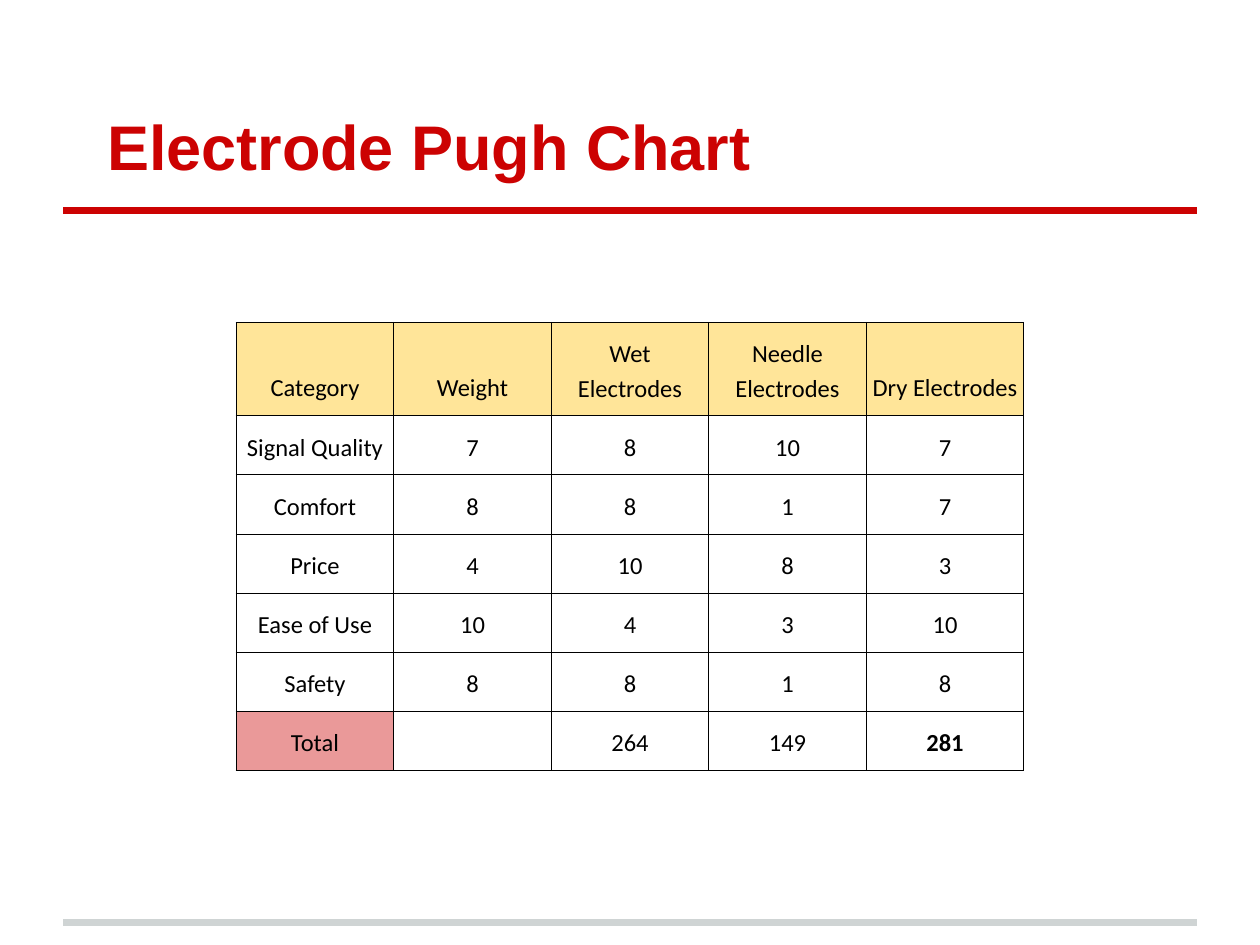
from dataclasses import dataclass

from lxml import etree
from pptx import Presentation
from pptx.dml.color import RGBColor
from pptx.enum.shapes import MSO_CONNECTOR
from pptx.enum.text import MSO_ANCHOR, PP_ALIGN
from pptx.oxml.ns import qn
from pptx.util import Inches, Pt

LEFT, CENTER = PP_ALIGN.LEFT, PP_ALIGN.CENTER
BOTTOM = MSO_ANCHOR.BOTTOM
STRAIGHT = MSO_CONNECTOR.STRAIGHT
UNIT = 0.25
COLS, ROWS = 40, 30


@dataclass(frozen=True)
class Theme:
    red: str = "CC0202"
    gray: str = "CFD4D4"
    black: str = "000000"
    cream: str = "FFE599"
    rose: str = "EA9999"
    head: str = "Arial"
    body: str = "Calibri"
    large: int = 36
    small: int = 14
    rule: float = 4
    edge: float = 0.75


def grid(count):
    return Inches(count * UNIT)


def write(frame, text, *, font, size, color, bold=False, align=LEFT, space=1.0):
    part = frame.paragraphs[0]
    part.alignment = align
    part.line_spacing = space
    run = part.add_run()
    run.text = text
    run.font.name = font
    run.font.size = Pt(size)
    run.font.bold = bold
    run.font.color.rgb = RGBColor.from_string(color)


class Painter:
    def __init__(self, slide, theme):
        self.slide = slide
        self.theme = theme

    def rule(self, row, color):
        line = self.slide.shapes.add_connector(
            STRAIGHT, grid(2), grid(row), grid(COLS - 2), grid(row))
        line.line.color.rgb = RGBColor.from_string(color)
        line.line.width = Pt(self.theme.rule)
        etree.SubElement(line.element.spPr, qn("a:effectLst"))

    def title(self, text, left, top, width, height):
        box = self.slide.shapes.add_textbox(
            grid(left), grid(top), grid(width), grid(height))
        frame = box.text_frame
        frame.word_wrap = True
        frame.vertical_anchor = BOTTOM
        frame.margin_left = Inches(0.35)
        frame.margin_right = Inches(0.1)
        frame.margin_top = frame.margin_bottom = Inches(0.1)
        write(frame, text, font=self.theme.head, size=self.theme.large,
              color=self.theme.red, bold=True)

    def border(self, cell):
        props = cell._tc.get_or_add_tcPr()
        for side in ("lnL", "lnR", "lnT", "lnB"):
            line = etree.SubElement(
                props, qn(f"a:{side}"), w=str(Pt(self.theme.edge)))
            fill = etree.SubElement(line, qn("a:solidFill"))
            etree.SubElement(fill, qn("a:srgbClr"), val=self.theme.black)

    def cell(self, cell, text, fill=None, bold=False):
        self.border(cell)
        if fill:
            cell.fill.solid()
            cell.fill.fore_color.rgb = RGBColor.from_string(fill)
        else:
            cell.fill.background()
        if not text:
            return
        cell.vertical_anchor = BOTTOM
        cell.margin_left = cell.margin_right = Inches(0.03)
        cell.margin_top = cell.margin_bottom = Inches(0.1)
        write(cell.text_frame, text, font=self.theme.body,
              size=self.theme.small, color=self.theme.black, bold=bold,
              align=CENTER, space=1.15)

    def table(self, data, left, top, width, first, other):
        rows, cols = len(data), len(data[0])
        height = first + other * (rows - 1)
        table = self.slide.shapes.add_table(
            rows, cols, grid(left), grid(top), grid(width), grid(height)).table
        table.first_row = table.horz_banding = False
        for col in table.columns:
            col.width = grid(width / cols)
        for r, row in enumerate(data):
            table.rows[r].height = grid(other if r else first)
            for c, text in enumerate(row):
                last = r == rows - 1
                fill = None
                if r == 0:
                    fill = self.theme.cream
                elif last and c == 0:
                    fill = self.theme.rose
                self.cell(table.cell(r, c), text, fill, last and c == cols - 1)


def main():
    deck = Presentation()
    deck.slide_width, deck.slide_height = grid(COLS), grid(ROWS)
    theme = Theme()
    page = Painter(deck.slides.add_slide(deck.slide_layouts[6]), theme)
    page.rule(29.28, theme.gray)
    page.rule(6.68, theme.red)
    page.title("Electrode Pugh Chart", 2, 1.2, 36, 5)
    scores = [
        ("Category", "Weight", "Wet Electrodes", "Needle Electrodes",
         "Dry Electrodes"),
        ("Signal Quality", "7", "8", "10", "7"),
        ("Comfort", "8", "8", "1", "7"),
        ("Price", "4", "10", "8", "3"),
        ("Ease of Use", "10", "4", "3", "10"),
        ("Safety", "8", "8", "1", "8"),
        ("Total", "", "264", "149", "281"),
    ]
    page.table(scores, 7.5, 10.24, 25, 2.96, 1.88)
    deck.save("out.pptx")


if __name__ == "__main__":
    main()
